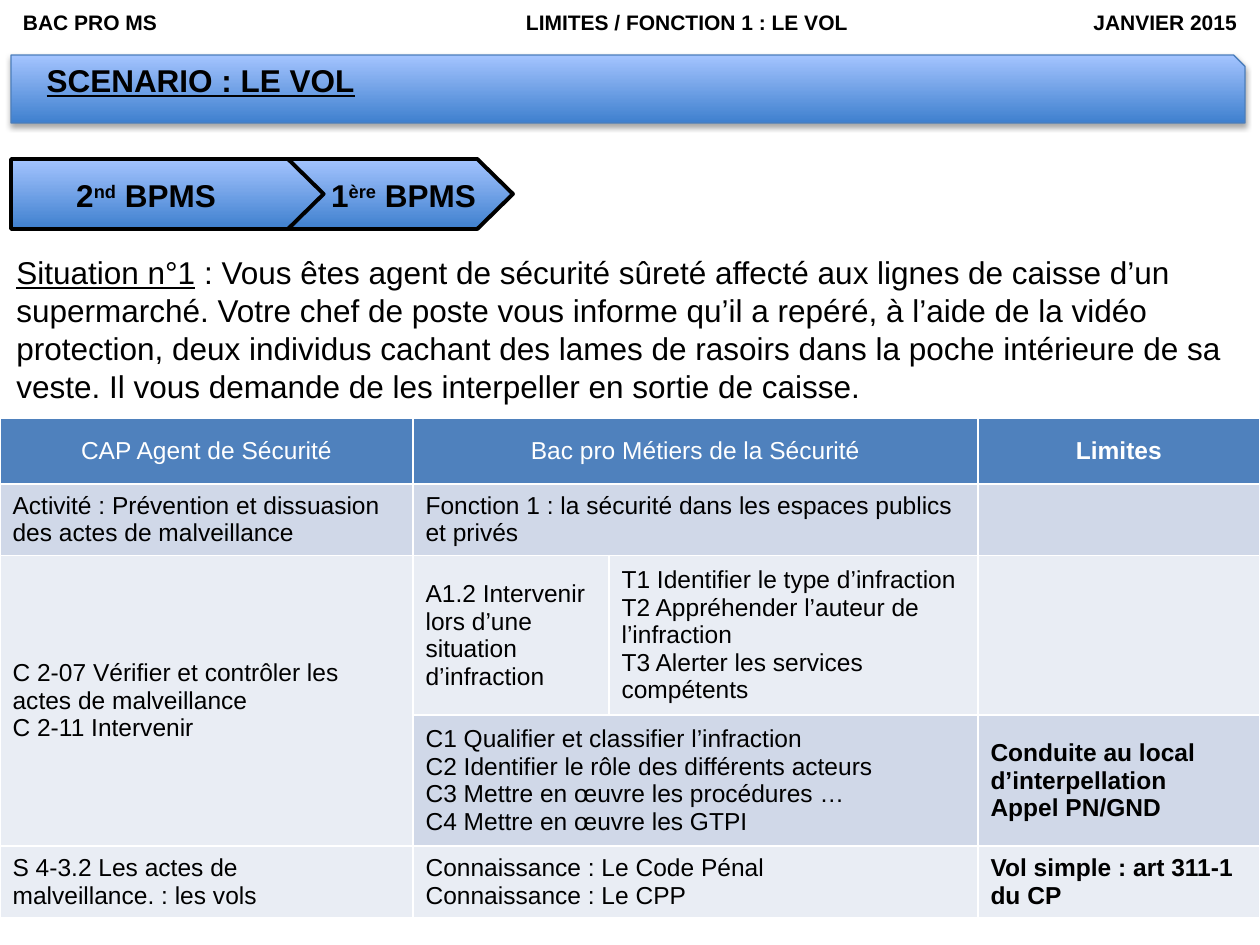
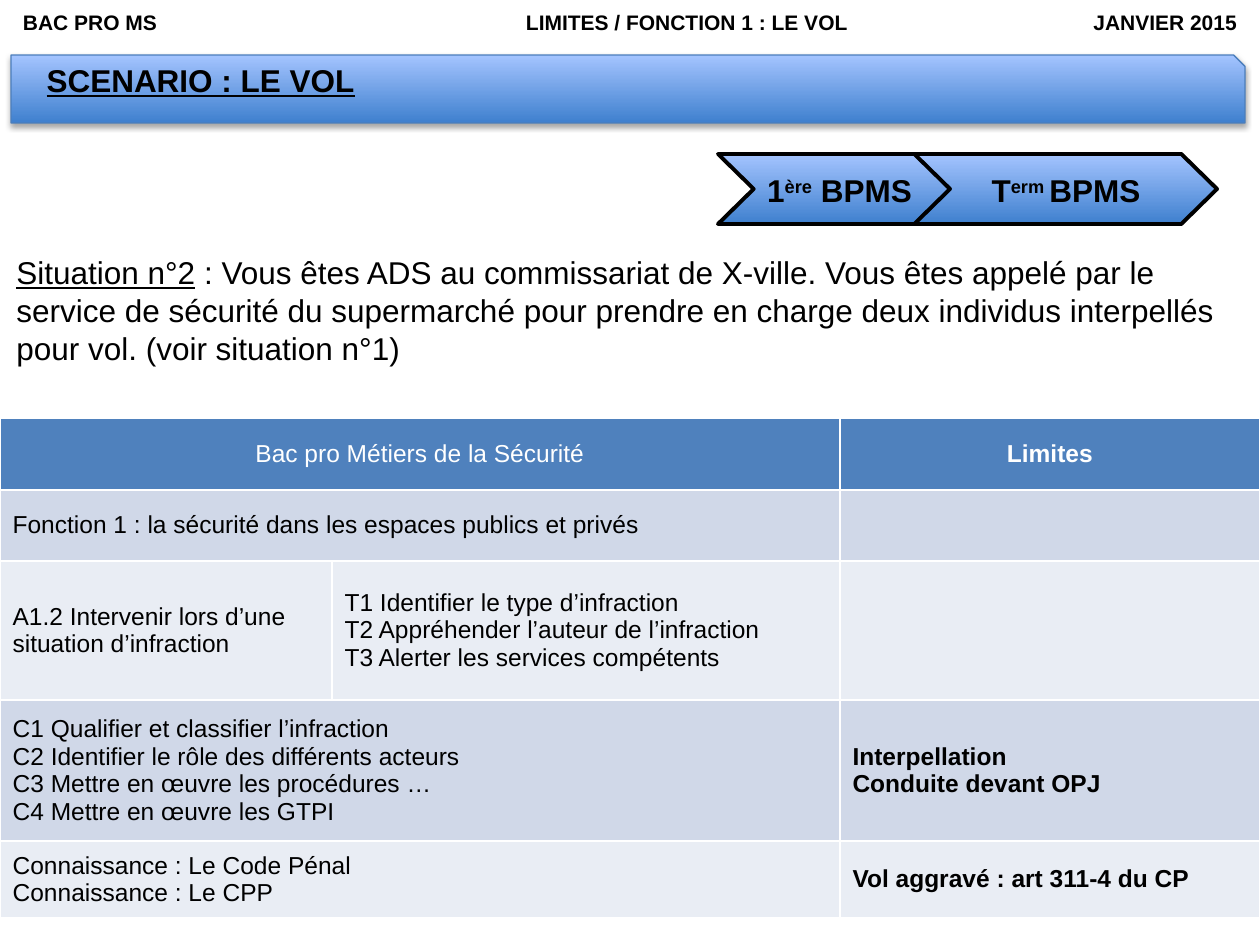
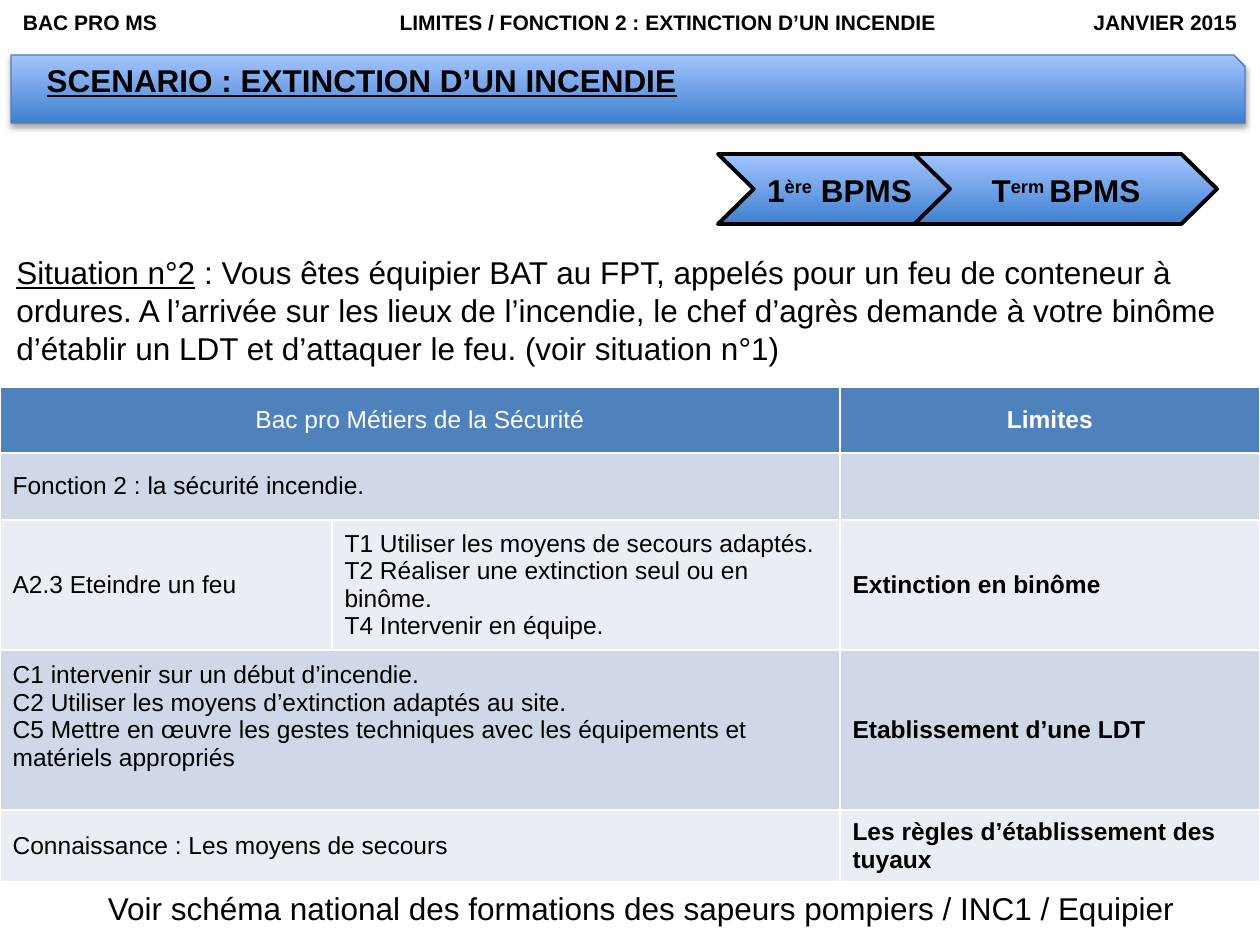
from dataclasses import dataclass
from typing import NamedTuple, Optional

from lxml.etree import SubElement
from pptx import Presentation
from pptx.dml.color import RGBColor
from pptx.enum.shapes import MSO_SHAPE as Preset
from pptx.enum.text import MSO_ANCHOR as Anchor, MSO_AUTO_SIZE as AutoSize, PP_ALIGN as Align
from pptx.oxml.ns import qn
from pptx.util import Emu, Pt

PX_PER_INCH = 126
SLIDE_WIDTH, SLIDE_HEIGHT = 1260, 945
COLORS = {
    "black": "000000",
    "white": "FFFFFF",
    "gradient_bottom": "3F80CE",
    "gradient_top": "A4C4FF",
    "bar_line": "4B7EBC",
    "header": "4F81BD",
    "band_dark": "D0D8E8",
    "band_light": "E9EDF4",
}
SMALL_BOLD = {"size": Pt(12), "bold": True}
BODY = {"size": Pt(18), "bold": False}
BOLD = {"size": Pt(18), "bold": True}
UNDERLINED = {"underline": True}
TITLE_ONLY = 5
HEADER_INSET = 23
HEADER_RIGHT = 1237


class Box(NamedTuple):
    left: int
    top: int
    width: int
    height: int


class TextRun(NamedTuple):
    text: str
    format: dict = {}
    raised: bool = False


@dataclass
class Level:
    """A school year, shown as an arrow with a label."""
    preset: Preset
    adjustment: float
    arrow: Box
    label: Box
    wording: tuple[str, str, str]


@dataclass
class Grid:
    """In rows, None continues the cell on its left, or above in the first column."""
    top: int
    columns: list[int]
    heights: list[int]
    rows: list[list[Optional[str]]]
    bottom_margins: dict[tuple[int, int], int]


@dataclass
class Scenario:
    subject: str
    subject_center: int
    title: str
    title_width: int
    levels: list[Level]
    situation: str
    story: str
    story_height: int
    grid: Grid
    note: str = ""


def px(length: int) -> Emu:
    return Emu(round(length * 914400 / PX_PER_INCH))


def color(name: str) -> RGBColor:
    return RGBColor.from_string(COLORS[name])


def write_runs(paragraph, runs: list[TextRun], base: dict, color_name: str = "black") -> None:
    for text_run in runs:
        run = paragraph.add_run()
        run.text = text_run.text
        for name, value in {"name": "Arial", **base, **text_run.format}.items():
            setattr(run.font, name, value)
        run.font.color.rgb = color(color_name)
        if text_run.raised:
            run.font._element.set("baseline", "30000")


def add_text(slide, box: Box, runs: list[TextRun], base: dict, align=Align.LEFT):
    frame = slide.shapes.add_textbox(*map(px, box)).text_frame
    frame.word_wrap = True
    paragraph = frame.paragraphs[0]
    paragraph.alignment = align
    write_runs(paragraph, runs, base)
    return frame


def add_gradient_shape(slide, preset: Preset, box: Box, line_name: str, line_width: float):
    shape = slide.shapes.add_shape(preset, *map(px, box))
    shape.shadow.inherit = False
    shape.fill.gradient()
    shape.fill.gradient_angle = 90
    for stop, name in zip(shape.fill.gradient_stops, ("gradient_bottom", "gradient_top")):
        stop.color.rgb = color(name)
    shape.line.color.rgb = color(line_name)
    shape.line.width = Pt(line_width)
    return shape


def add_header(slide, subject: str, center: int) -> None:
    runs = [TextRun(f"BAC PRO MS\t{subject}\tJANVIER 2015")]
    frame = add_text(slide, Box(0, 3, SLIDE_WIDTH, 38), runs, SMALL_BOLD)
    frame.margin_left, frame.margin_right = px(HEADER_INSET), 0
    stops = SubElement(frame.paragraphs[0]._p.get_or_add_pPr(), qn("a:tabLst"))
    for position, kind in ((center, "ctr"), (HEADER_RIGHT, "r")):
        SubElement(stops, qn("a:tab"), pos=str(px(position - HEADER_INSET)), algn=kind)


def add_title_bar(slide, text: str, width: int) -> None:
    bar = add_gradient_shape(slide, Preset.SNIP_1_RECTANGLE, Box(11, 55, 1234, 68), "bar_line", 0.75)
    effects = bar._element.spPr.find(qn("a:effectLst"))
    shadow = SubElement(effects, qn("a:outerShdw"), blurRad="40000", dist="23000",
                        dir="5400000", rotWithShape="0")
    shade = SubElement(shadow, qn("a:srgbClr"), val=COLORS["black"])
    SubElement(shade, qn("a:alpha"), val="35000")

    title = slide.shapes.title
    title._element.addprevious(bar._element)
    box = Box(34, 55, width, 50)
    for name, value in zip(("left", "top", "width", "height"), box):
        setattr(title, name, px(value))
    frame = title.text_frame
    frame.word_wrap = False
    frame.auto_size = AutoSize.NONE
    frame.vertical_anchor = Anchor.TOP
    frame.paragraphs[0].alignment = Align.LEFT
    write_runs(frame.paragraphs[0], [TextRun(text, UNDERLINED)], BOLD)


def add_levels(slide, levels: list[Level]) -> None:
    for level in levels:
        arrow = add_gradient_shape(slide, level.preset, level.arrow, "black", 2.25)
        arrow.adjustments[0] = level.adjustment
    for level in levels:
        start, raised, rest = level.wording
        runs = [TextRun(start), TextRun(raised, raised=True), TextRun(rest)]
        add_text(slide, level.label, runs, BOLD, Align.CENTER)


def add_borders(cell) -> None:
    properties = cell._tc.get_or_add_tcPr()
    for side in ("lnL", "lnR", "lnT", "lnB"):
        line = SubElement(properties, qn(f"a:{side}"), w=str(Pt(1)))
        fill = SubElement(line, qn("a:solidFill"))
        SubElement(fill, qn("a:srgbClr"), val=COLORS["white"])


def fill_cell(cell, text: str, is_header: bool, is_limit: bool) -> None:
    cell.vertical_anchor = Anchor.MIDDLE
    frame = cell.text_frame
    for index, line in enumerate(text.split("\n") if text else []):
        paragraph = frame.add_paragraph() if index else frame.paragraphs[0]
        paragraph.alignment = Align.CENTER if is_header else Align.LEFT
        write_runs(paragraph, [TextRun(line)], {"size": Pt(14), "bold": is_limit},
                   "white" if is_header else "black")


def add_grid(slide, grid: Grid) -> None:
    box = Box(0, grid.top, sum(grid.columns), sum(grid.heights))
    table = slide.shapes.add_table(len(grid.heights), len(grid.columns), *map(px, box)).table
    table.first_row = table.horz_banding = False
    for column, width in zip(table.columns, grid.columns):
        column.width = px(width)
    for row, height in zip(table.rows, grid.heights):
        row.height = px(height)
    last = len(grid.columns) - 1
    for r, texts in enumerate(grid.rows):
        band = "header" if r == 0 else ("band_light", "band_dark")[r % 2]
        for c, text in enumerate(texts):
            cell = table.cell(r, c)
            add_borders(cell)
            cell.fill.solid()
            cell.fill.fore_color.rgb = color(band)
            if text is None:
                origin = table.cell(r, c - 1) if c else table.cell(r - 1, c)
                origin.merge(cell)
            else:
                fill_cell(cell, text, r == 0, c == last)
    for (r, c), margin in grid.bottom_margins.items():
        table.cell(r, c).margin_bottom = px(margin)


def add_scenario(presentation, scenario: Scenario) -> None:
    slide = presentation.slides.add_slide(presentation.slide_layouts[TITLE_ONLY])
    add_header(slide, scenario.subject, scenario.subject_center)
    add_title_bar(slide, scenario.title, scenario.title_width)
    story = [TextRun(scenario.situation, UNDERLINED), TextRun(f" : {scenario.story}")]
    add_text(slide, Box(4, 247, SLIDE_WIDTH, scenario.story_height), story, BODY)
    add_grid(slide, scenario.grid)
    add_levels(slide, scenario.levels)
    if scenario.note:
        add_text(slide, Box(11, 883, SLIDE_WIDTH, 50), [TextRun(scenario.note)], BODY, Align.CENTER)


FIRST_YEARS = [
    Level(Preset.PENTAGON, 0.5, Box(11, 159, 397, 70), Box(61, 170, 170, 50), ("2", "nd", " BPMS")),
    Level(Preset.CHEVRON, 0.51, Box(288, 159, 225, 70), Box(313, 170, 181, 50), ("1", "ère", " BPMS")),
]
LAST_YEARS = [
    Level(Preset.CHEVRON, 0.51, Box(911, 154, 306, 70), Box(933, 165, 266, 50), ("T", "erm ", "BPMS")),
    Level(Preset.CHEVRON, 0.51, Box(718, 154, 232, 70), Box(749, 165, 181, 50), ("1", "ère", " BPMS")),
]
THREE_COLUMNS = [332, 508, 420]
DIPLOMA = "Bac pro Métiers de la Sécurité"
THEFT_SUBJECT = "LIMITES / FONCTION 1 : LE VOL"
THEFT_TITLE = "SCENARIO : LE VOL"
THEFT_FUNCTION = "Fonction 1 : la sécurité dans les espaces publics et privés"
THEFT_ACTIVITY = "A1.2 Intervenir lors d’une situation d’infraction"
THEFT_TASKS = ("T1 Identifier le type d’infraction\nT2 Appréhender l’auteur de l’infraction\n"
               "T3 Alerter les services compétents")
THEFT_SKILLS = ("C1 Qualifier et classifier l’infraction\nC2 Identifier le rôle des différents acteurs\n"
                "C3 Mettre en œuvre les procédures …\nC4 Mettre en œuvre les GTPI")
THEFT_KNOWLEDGE = "Connaissance : Le Code Pénal\nConnaissance : Le CPP"

SCENARIOS = [
    Scenario(
        THEFT_SUBJECT, 687, THEFT_TITLE, 336, FIRST_YEARS, "Situation n°1",
        "Vous êtes agent de sécurité sûreté affecté aux lignes de caisse d’un supermarché. "
        "Votre chef de poste vous informe qu’il a repéré, à l’aide de la vidéo protection, "
        "deux individus cachant des lames de rasoirs dans la poche intérieure de sa veste. "
        "Il vous demande de les interpeller en sortie de caisse.",
        165,
        Grid(418, [413, 196, 369, 282], [66, 71, 159, 131, 72], [
            ["CAP Agent de Sécurité", DIPLOMA, None, "Limites"],
            ["Activité : Prévention et dissuasion des actes de malveillance", THEFT_FUNCTION, None, ""],
            ["C 2-07 Vérifier et contrôler les actes de malveillance\nC 2-11 Intervenir",
             THEFT_ACTIVITY, THEFT_TASKS, ""],
            [None, THEFT_SKILLS, None, "Conduite au local d’interpellation\nAppel PN/GND"],
            ["S 4-3.2 Les actes de malveillance. : les vols", THEFT_KNOWLEDGE, None,
             "Vol simple : art 311-1 du CP"],
        ], {}),
    ),
    Scenario(
        THEFT_SUBJECT, 687, THEFT_TITLE, 336, LAST_YEARS, "Situation n°2",
        "Vous êtes ADS au commissariat de X-ville. Vous êtes appelé par le service de sécurité "
        "du supermarché pour prendre en charge deux individus interpellés pour vol. "
        "(voir situation n°1)",
        127,
        Grid(418, THREE_COLUMNS, [72, 71, 139, 141, 77], [
            [DIPLOMA, None, "Limites"],
            [THEFT_FUNCTION, None, ""],
            [THEFT_ACTIVITY, THEFT_TASKS, ""],
            [THEFT_SKILLS, None, "Interpellation\nConduite devant OPJ"],
            [THEFT_KNOWLEDGE, None, "Vol aggravé : art 311-4 du CP"],
        ], {}),
    ),
    Scenario(
        "LIMITES / FONCTION 2 : EXTINCTION D’UN INCENDIE", 668,
        "SCENARIO : EXTINCTION D’UN INCENDIE", 662, LAST_YEARS, "Situation n°2",
        "Vous êtes équipier BAT au FPT, appelés pour un feu de conteneur à ordures. "
        "A l’arrivée sur les lieux de l’incendie, le chef d’agrès demande à votre binôme "
        "d’établir un LDT et d’attaquer le feu. (voir situation n°1)",
        127,
        Grid(387, THREE_COLUMNS, [66, 67, 130, 160, 72], [
            [DIPLOMA, None, "Limites"],
            ["Fonction 2 : la sécurité incendie.", None, ""],
            ["A2.3 Eteindre un feu",
             "T1 Utiliser les moyens de secours adaptés.\n"
             "T2 Réaliser une extinction seul ou en binôme.\nT4 Intervenir en équipe.",
             "Extinction en binôme"],
            ["C1 intervenir sur un début d’incendie.\n"
             "C2 Utiliser les moyens d’extinction adaptés au site.\n"
             "C5 Mettre en œuvre les gestes techniques avec les équipements et matériels appropriés",
             None, "Etablissement d’une LDT"],
            ["Connaissance : Les moyens de secours", None, "Les règles d’établissement des tuyaux"],
        ], {(3, 0): 34}),
        "Voir schéma national des formations des sapeurs pompiers / INC1 / Equipier",
    ),
]


def main() -> None:
    presentation = Presentation()
    presentation.slide_width, presentation.slide_height = px(SLIDE_WIDTH), px(SLIDE_HEIGHT)
    for scenario in SCENARIOS:
        add_scenario(presentation, scenario)
    presentation.save("out.pptx")


if __name__ == "__main__":
    main()
